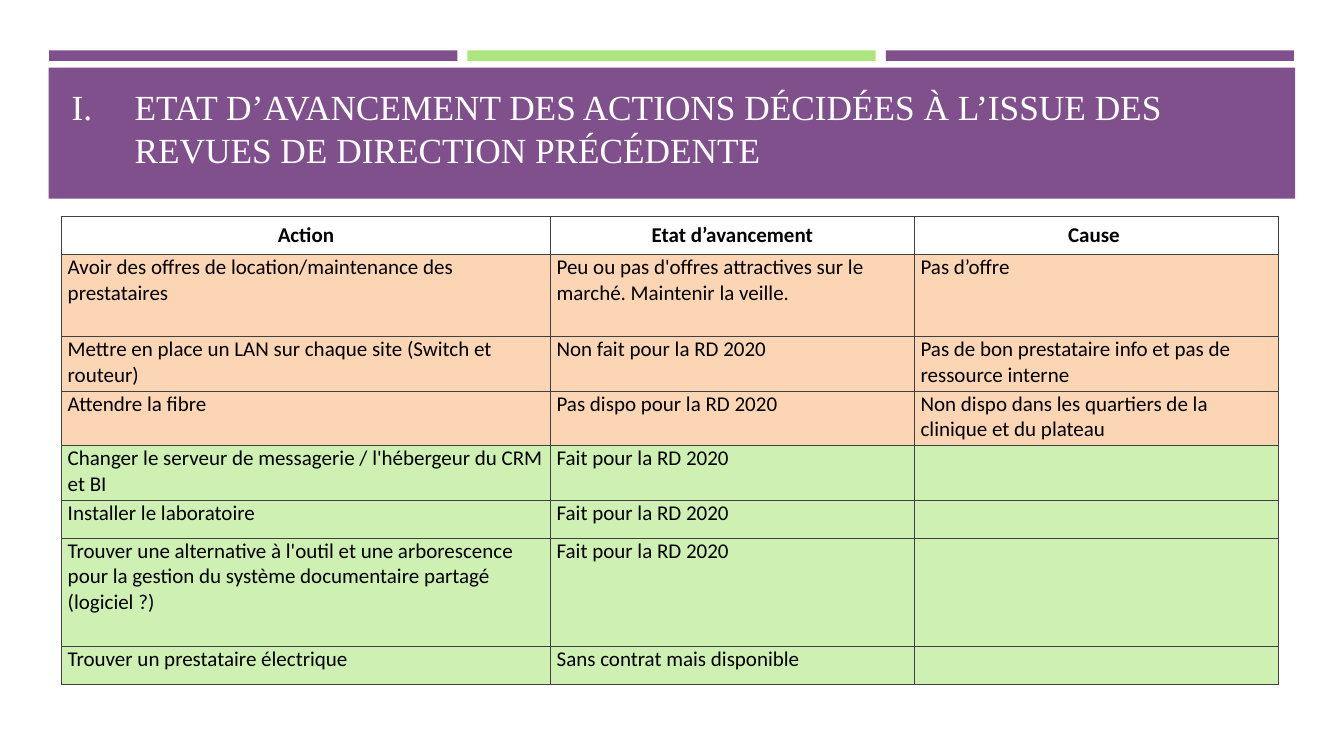
"""Build the slide on the progress of actions from earlier management reviews."""
from dataclasses import dataclass

from lxml import etree
from pptx import Presentation
from pptx.dml.color import RGBColor
from pptx.enum import shapes, text
from pptx.oxml import ns
from pptx.util import Pt

TITLE = "ETAT D’AVANCEMENT DES ACTIONS DÉCIDÉES À L’ISSUE DES REVUES DE DIRECTION PRÉCÉDENTE"
HEAD = ("Action", "Etat d’avancement", "Cause ")
OPEN = [
    ("Avoir des offres de location/maintenance des prestataires",
     "Peu ou pas d'offres attractives sur le marché. Maintenir la veille.", "Pas d’offre"),
    ("Mettre en place un LAN sur chaque site (Switch et routeur)",
     "Non fait pour la RD 2020", "Pas de bon prestataire info et pas de ressource interne"),
    ("Attendre la fibre", "Pas dispo pour la RD 2020",
     "Non dispo dans les quartiers de la clinique et du plateau"),
]
DONE = [
    ("Changer le serveur de messagerie / l'hébergeur du CRM et BI", "Fait pour la RD 2020", ""),
    ("Installer le laboratoire", "Fait pour la RD 2020", ""),
    ("Trouver une alternative à l'outil et une arborescence pour la gestion du système "
     "documentaire partagé (logiciel ?)", "Fait pour la RD 2020", ""),
    ("Trouver un prestataire électrique", "Sans contrat mais disponible", ""),
]
WIDTHS = (349.2, 260, 260)
HEIGHTS = (27.4, 58.5, 39, 39, 39, 27, 77.5, 27)


@dataclass(frozen=True)
class Theme:
    """Colours, fonts and type sizes."""
    plum: str = "7F508B"
    lime: str = "ADE67F"
    peach: str = "FCD5B5"
    mint: str = "CEF0B2"
    white: str = "FFFFFF"
    black: str = "000000"
    rule: str = "404040"
    serif: str = "Times New Roman"
    sans: str = "Calibri"
    large: float = 25.2
    small: float = 15


THEME = Theme()


def write(para, words, face, size, color, bold=False):
    """Add one formatted run."""
    run = para.add_run()
    run.text = words
    font = run.font
    font.name, font.size, font.bold = face, Pt(size), bold
    font.color.rgb = RGBColor.from_string(color)


def band(slide, left, top, width, height, color):
    """Draw a plain filled bar."""
    bar = slide.shapes.add_shape(
        shapes.MSO_SHAPE.RECTANGLE, Pt(left), Pt(top), Pt(width), Pt(height))
    bar.shadow.inherit = False
    bar.fill.solid()
    bar.fill.fore_color.rgb = RGBColor.from_string(color)
    bar.line.fill.background()


def border(cell):
    """Rule all four sides of a cell."""
    props = cell._tc.get_or_add_tcPr()
    for side in ("lnL", "lnR", "lnT", "lnB"):
        line = etree.SubElement(props, ns.qn("a:" + side), w=str(Pt(1)))
        fill = etree.SubElement(line, ns.qn("a:solidFill"))
        etree.SubElement(fill, ns.qn("a:srgbClr"), val=THEME.rule)


def head(slide):
    """Place the numbered title on top of its band."""
    title = slide.shapes.title
    title.element.getparent().append(title.element)
    title.left, title.top, title.width, title.height = Pt(43.9), Pt(74.9), Pt(868.3), Pt(79.9)
    frame = title.text_frame
    frame.word_wrap = True
    frame.auto_size = text.MSO_AUTO_SIZE.NONE
    frame.vertical_anchor = text.MSO_ANCHOR.BOTTOM
    frame.margin_left = frame.margin_right = Pt(7.2)
    frame.margin_top, frame.margin_bottom = Pt(3.6), Pt(32.6)
    para = frame.paragraphs[0]
    para.alignment = text.PP_ALIGN.LEFT
    para.line_spacing = Pt(30.7)
    props = para._p.get_or_add_pPr()
    props.set("marL", str(Pt(45)))
    props.set("indent", str(Pt(-45)))
    etree.SubElement(props, ns.qn("a:buFont"), typeface=THEME.serif)
    etree.SubElement(props, ns.qn("a:buAutoNum"), type="romanUcPeriod")
    write(para, TITLE, THEME.serif, THEME.large, THEME.white)


def grid(slide):
    """Fill the table of actions."""
    rows = [(HEAD, None)]
    rows += [(row, THEME.peach) for row in OPEN] + [(row, THEME.mint) for row in DONE]
    table = slide.shapes.add_table(
        len(rows), len(HEAD), Pt(43.9), Pt(154.6), Pt(sum(WIDTHS)), Pt(sum(HEIGHTS))).table
    table.first_row = table.horz_banding = False
    for col, width in zip(table.columns, WIDTHS):
        col.width = Pt(width)
    for line, height, (row, color) in zip(table.rows, HEIGHTS, rows):
        line.height = Pt(height)
        for cell, words in zip(line.cells, row):
            cell.margin_left = cell.margin_right = Pt(4.5)
            cell.margin_top = cell.margin_bottom = Pt(0)
            border(cell)
            para = cell.text_frame.paragraphs[0]
            if color:
                cell.fill.solid()
                cell.fill.fore_color.rgb = RGBColor.from_string(color)
            else:
                cell.fill.background()
                cell.vertical_anchor = text.MSO_ANCHOR.MIDDLE
                para.alignment = text.PP_ALIGN.CENTER
            if words:
                write(para, words, THEME.sans, THEME.small, THEME.black, not color)


def main():
    """Assemble and save the slide."""
    deck = Presentation()
    deck.slide_width, deck.slide_height = Pt(960), Pt(540)
    slide = deck.slides.add_slide(deck.slide_layouts[5])
    for step, color in enumerate((THEME.plum, THEME.lime, THEME.plum)):
        band(slide, 35.1 + 298.8 * step, 36, 291.6, 7.5, color)
    band(slide, 34.8, 48.4, 890.4, 93.6, THEME.plum)
    grid(slide)
    head(slide)
    deck.save("out.pptx")


if __name__ == "__main__":
    main()
